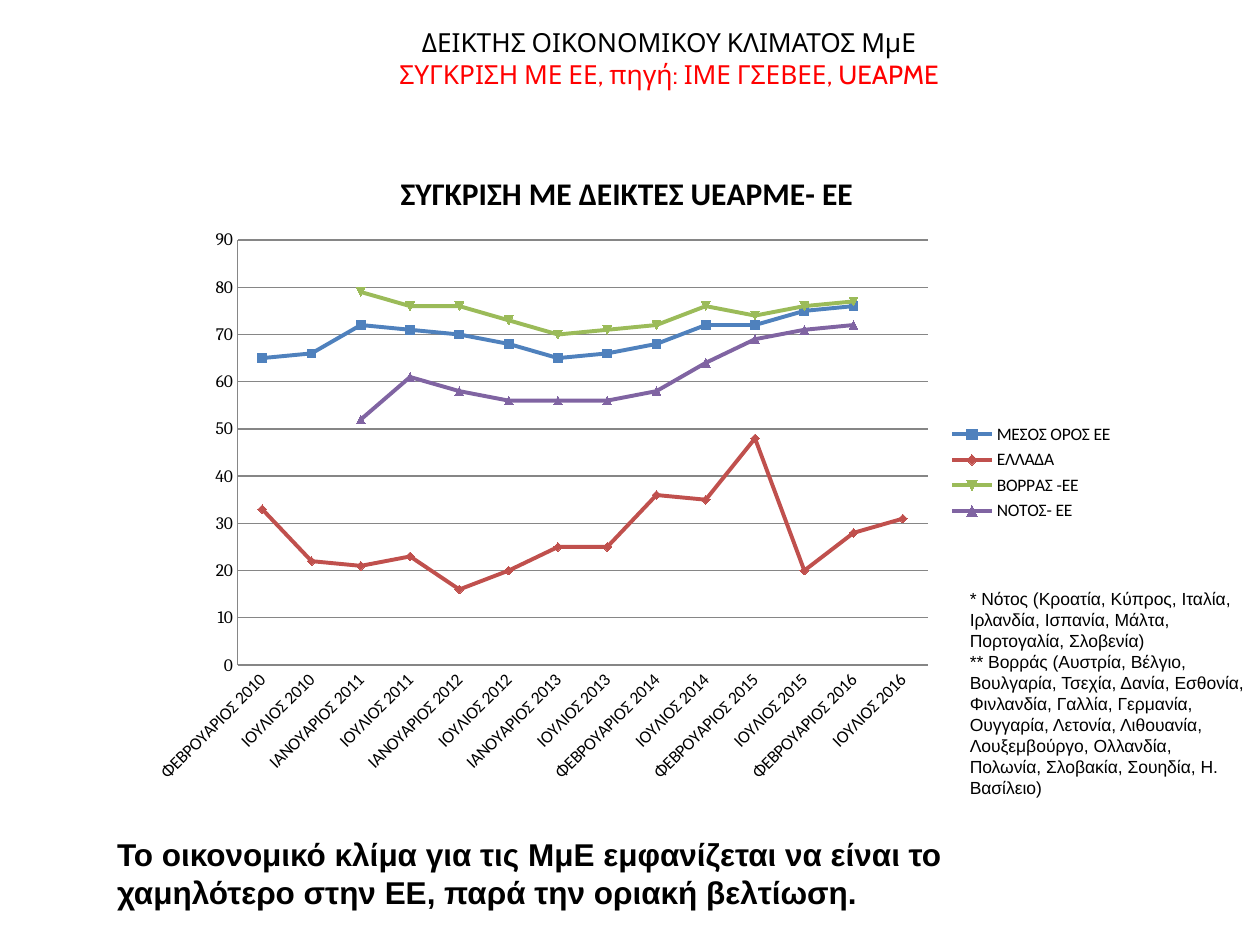
from copy import deepcopy
from dataclasses import dataclass

from lxml import etree
from pptx import Presentation
from pptx.chart.data import CategoryChartData
from pptx.dml.color import RGBColor
from pptx.enum.chart import XL_CHART_TYPE, XL_LEGEND_POSITION, XL_TICK_MARK
from pptx.enum.text import MSO_ANCHOR, MSO_AUTO_SIZE, PP_ALIGN
from pptx.oxml.ns import qn
from pptx.util import Cm, Pt

LINE_MARKERS = XL_CHART_TYPE.LINE_MARKERS
RIGHT = XL_LEGEND_POSITION.RIGHT
NO_TICK = XL_TICK_MARK.NONE
TOP = MSO_ANCHOR.TOP
NO_FIT = MSO_AUTO_SIZE.NONE
GROW = MSO_AUTO_SIZE.SHAPE_TO_FIT_TEXT
CENTER = PP_ALIGN.CENTER

BLACK, RED, GRAY = "000000", "FF0000", "868686"


@dataclass
class Box:
    left: float
    top: float
    width: float
    height: float

    def lengths(self) -> list:
        return [Cm(v) for v in (self.left, self.top, self.width, self.height)]


@dataclass
class Note:
    box: Box
    text: str
    size: float
    bold: bool = False


@dataclass
class Series:
    name: str
    color: str
    values: list


TITLE_BOX = Box(3.18, 0.41, 20.62, 1.88)
CHART_BOX = Box(2.69, 2.95, 20.04, 13.13)
PLOT = Box(2.1, 1.89, 13.91, 8.57)
LEGEND = Box(16.4, 5.49, 3.4, 2.18)

FEB, JAN, JUL = "ΦΕΒΡΟΥΑΡΙΟΣ", "ΙΑΝΟΥΑΡΙΟΣ", "ΙΟΥΛΙΟΣ"
FIRST_MONTHS = [FEB, JAN, JAN, JAN, FEB, FEB, FEB]
CATEGORIES = [f"{month} {year}"
              for year, first in enumerate(FIRST_MONTHS, 2010)
              for month in (first, JUL)]

SERIES = [
    Series("ΜΕΣΟΣ ΟΡΟΣ ΕΕ", "4F81BD",
           [65, 66, 72, 71, 70, 68, 65, 66, 68, 72, 72, 75, 76, None]),
    Series("ΕΛΛΑΔΑ", "C0504D",
           [33, 22, 21, 23, 16, 20, 25, 25, 36, 35, 48, 20, 28, 31]),
    Series("ΒΟΡΡΑΣ -ΕΕ", "9BBB59",
           [None, None, 79, 76, 76, 73, 70, 71, 72, 76, 74, 76, 77, None]),
    Series("ΝΟΤΟΣ- ΕΕ", "8064A2",
           [None, None, 52, 61, 58, 56, 56, 56, 58, 64, 69, 71, 72, None]),
]

NOTES = [
    Note(Box(19.3, 11.73, 6.1, 4.52),
         "* Νότος (Κροατία, Κύπρος, Ιταλία, Ιρλανδία, Ισπανία, Μάλτα, "
         "Πορτογαλία, Σλοβενία)\n"
         "** Βορράς (Αυστρία, Βέλγιο, Βουλγαρία, Τσεχία, Δανία, Εσθονία, "
         "Φινλανδία, Γαλλία, Γερμανία, Ουγγαρία, Λετονία, Λιθουανία, "
         "Λουξεμβούργο, Ολλανδία, Πολωνία, Σλοβακία, Σουηδία, Η. Βασίλειο)",
         10),
    Note(Box(2.11, 16.71, 20.6, 1.8),
         "Το οικονομικό κλίμα για τις ΜμΕ εμφανίζεται να είναι το "
         "χαμηλότερο στην ΕΕ, παρά την οριακή βελτίωση.", 18, True),
]


def rgb(color: str) -> RGBColor:
    return RGBColor.from_string(color)


def style(font, name: str, size: float, color: str = BLACK,
          bold: bool = False) -> None:
    font.name = name
    font.size = Pt(size)
    font.bold = bold
    font.color.rgb = rgb(color)


def add_title(slide) -> None:
    sp = slide.shapes.title
    sp.left, sp.top, sp.width, sp.height = TITLE_BOX.lengths()
    tf = sp.text_frame
    tf.text = ("ΔΕΙΚΤΗΣ ΟΙΚΟΝΟΜΙΚΟΥ ΚΛΙΜΑΤΟΣ ΜμΕ\v"
               "ΣΥΓΚΡΙΣΗ ΜΕ ΕΕ, πηγή: ΙΜΕ ΓΣΕΒΕΕ, UEAPME")
    tf.vertical_anchor = TOP
    tf.auto_size = NO_FIT
    p = tf.paragraphs[0]
    p.alignment = CENTER
    for r, color in zip(p.runs, (BLACK, RED)):
        style(r.font, "Cabin", 15, color)
    p._p.find(qn("a:br")).append(deepcopy(p.runs[0]._r.rPr))


def add_note(slide, note: Note) -> None:
    tf = slide.shapes.add_textbox(*note.box.lengths()).text_frame
    tf.word_wrap = True
    tf.auto_size = GROW
    tf.text = note.text
    for p in tf.paragraphs:
        for r in p.runs:
            style(r.font, "Arial", note.size, bold=note.bold)


def set_layout(element, box: Box, inner: bool = False) -> None:
    layout = element.get_or_add_layout() if hasattr(
        element, "get_or_add_layout") else element.find(qn("c:layout"))
    if layout is None:
        layout = etree.Element(qn("c:layout"))
        element.insert(0, layout)
    for child in list(layout):
        layout.remove(child)
    manual = etree.SubElement(layout, qn("c:manualLayout"))
    values = [("layoutTarget", "inner")] if inner else []
    values += [("xMode", "edge"), ("yMode", "edge"),
               ("x", box.left / CHART_BOX.width),
               ("y", box.top / CHART_BOX.height),
               ("w", box.width / CHART_BOX.width),
               ("h", box.height / CHART_BOX.height)]
    for tag, value in values:
        etree.SubElement(manual, qn(f"c:{tag}")).set("val", str(value))


def format_axis(axis, font_name: str) -> None:
    axis.major_tick_mark = NO_TICK
    axis.minor_tick_mark = NO_TICK
    axis.format.line.color.rgb = rgb(GRAY)
    style(axis.tick_labels.font, font_name, 10)


def add_line_chart(slide) -> None:
    data = CategoryChartData(number_format="0")
    data.categories = CATEGORIES
    for s in SERIES:
        data.add_series(s.name, s.values)
    chart = slide.shapes.add_chart(
        LINE_MARKERS, *CHART_BOX.lengths(), data).chart
    style(chart.font, "Cambria", 10)

    chart.has_title = True
    tf = chart.chart_title.text_frame
    tf.text = "ΣΥΓΚΡΙΣΗ ΜΕ ΔΕΙΚΤΕΣ UEAPME- ΕΕ "
    style(tf.paragraphs[0].runs[0].font, "Calibri", 18, bold=True)

    chart.has_legend = True
    chart.legend.position = RIGHT
    chart.legend.include_in_layout = False
    style(chart.legend.font, "Calibri", 10)
    set_layout(chart.legend._element, LEGEND)

    format_axis(chart.category_axis, "Calibri")
    body = chart.category_axis._element.find(qn("c:txPr")).find(qn("a:bodyPr"))
    body.set("rot", "-2700000")
    axis = chart.value_axis
    format_axis(axis, "Cambria")
    axis.minimum_scale, axis.maximum_scale, axis.major_unit = 0, 90, 10
    axis.has_major_gridlines = True
    axis.major_gridlines.format.line.color.rgb = rgb(GRAY)
    set_layout(chart._chartSpace.chart.plotArea, PLOT, inner=True)

    plot = chart.plots[0]
    plot.vary_by_categories = False
    for series, s in zip(plot.series, SERIES):
        series.smooth = False
        series.format.line.width = Pt(2.25)
        series.format.line.color.rgb = rgb(s.color)
        series.marker.size = 5
        fmt = series.marker.format
        fmt.fill.solid()
        fmt.fill.fore_color.rgb = rgb(s.color)
        fmt.line.color.rgb = rgb(s.color)


def main() -> None:
    prs = Presentation()
    prs.slide_width, prs.slide_height = Cm(25.4), Cm(19.05)
    slide = prs.slides.add_slide(prs.slide_layouts[5])
    add_title(slide)
    add_line_chart(slide)
    for note in NOTES:
        add_note(slide, note)
    prs.save("out.pptx")


if __name__ == "__main__":
    main()
